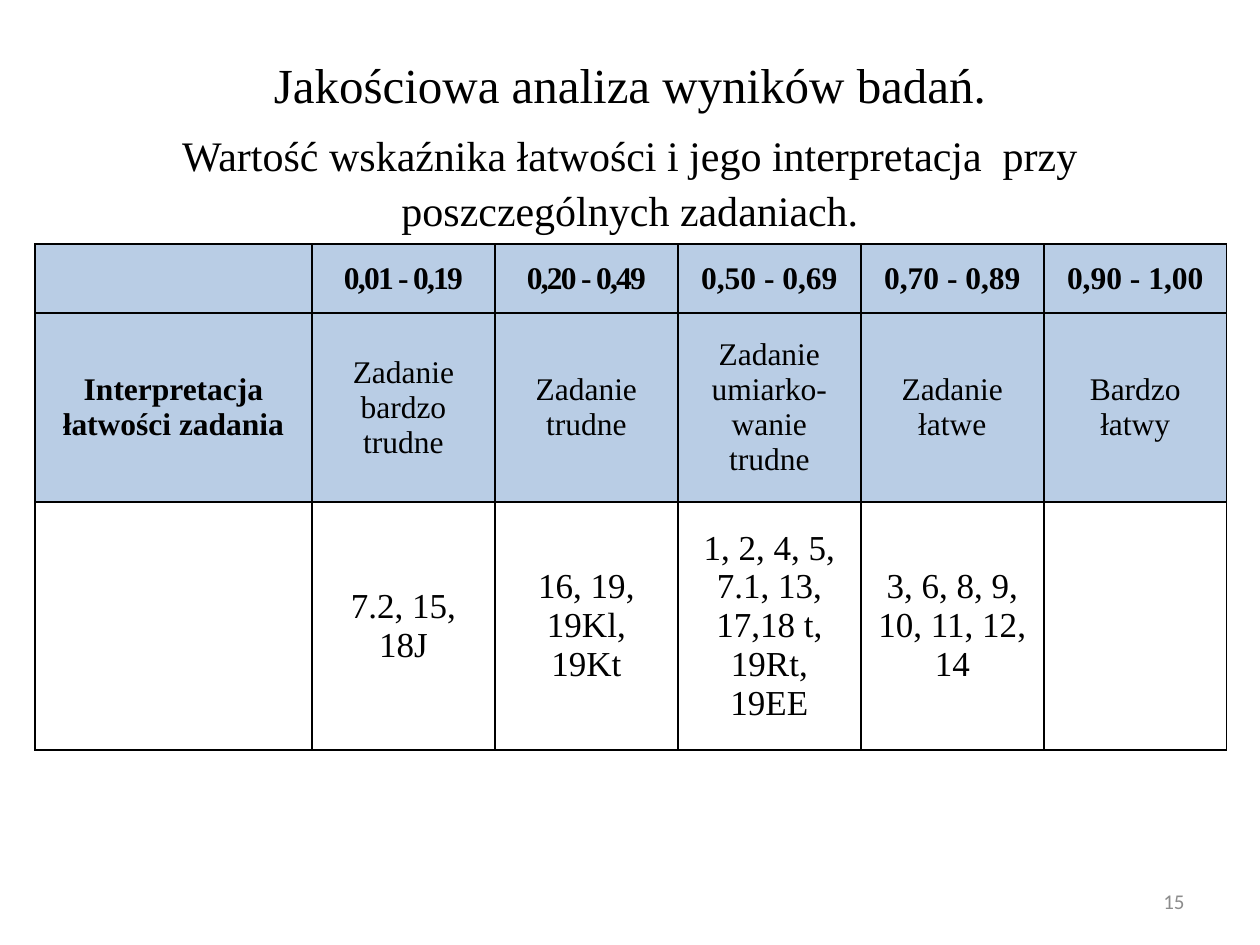
from pptx import Presentation
from pptx.dml.color import RGBColor
from pptx.enum.text import MSO_ANCHOR, PP_ALIGN
from pptx.oxml import parse_xml
from pptx.oxml.ns import nsdecls
from pptx.util import Pt

PX = 914400 // 126
BLACK = RGBColor(0x00, 0x00, 0x00)
GREY = RGBColor(0x8C, 0x8C, 0x8C)
BLUE = RGBColor(0xB9, 0xCD, 0xE5)
SERIF = "Times New Roman"


def style(p, text, size, align=PP_ALIGN.CENTER, name=SERIF, color=BLACK):
    p.text = text
    p.alignment = align
    p.font.size = Pt(size)
    p.font.name = name
    p.font.color.rgb = color


def add_borders(cell):
    tc_pr = cell._tc.get_or_add_tcPr()
    for i, side in enumerate(("lnL", "lnR", "lnT", "lnB")):
        tc_pr.insert(i, parse_xml(
            f'<a:{side} {nsdecls("a")} w="12700"><a:solidFill>'
            f'<a:srgbClr val="{BLACK}"/></a:solidFill></a:{side}>'))


prs = Presentation()
prs.slide_width = 1260 * PX
prs.slide_height = 945 * PX
s = prs.slides.add_slide(prs.slide_layouts[6])

sp = s.shapes.add_textbox(903 * PX, 876 * PX, 294 * PX, 50 * PX)
tf = sp.text_frame
tf.word_wrap = True
tf.vertical_anchor = MSO_ANCHOR.MIDDLE
style(tf.paragraphs[0], "15", 12, PP_ALIGN.RIGHT, "Calibri", GREY)

sp = s.shapes.add_textbox(0, 0, 1260 * PX, 247 * PX)
tf = sp.text_frame
tf.word_wrap = True
tf.margin_left = tf.margin_right = 74 * PX
tf.margin_top = 49 * PX
tf.margin_bottom = 25 * PX
title = tf.paragraphs[0]
style(title, "Jakościowa analiza wyników badań.", 28)
title.space_after = Pt(6)
subtitle = tf.add_paragraph()
style(subtitle, "Wartość wskaźnika łatwości i jego interpretacja  przy poszczególnych zadaniach.", 24)
for p in tf.paragraphs:
    p.line_spacing = 1.1

rows = [
    ["", "0,01 - 0,19", "0,20 - 0,49", "0,50 - 0,69", "0,70 - 0,89", "0,90 - 1,00"],
    ["Interpretacja łatwości zadania", "Zadanie bardzo trudne", "Zadanie trudne",
     "Zadanie umiarko-wanie trudne", "Zadanie łatwe", "Bardzo łatwy"],
    ["", "7.2, 15, 18J", "16, 19, 19Kl, 19Kt",
     "1, 2, 4, 5, 7.1, 13, 17,18 t, 19Rt, 19EE", "3, 6, 8, 9, 10, 11, 12, 14", ""],
]
widths = [277] + [183] * 5
heights = [69, 189, 248]
table = s.shapes.add_table(
    len(rows), len(widths), 35 * PX, 244 * PX, sum(widths) * PX, sum(heights) * PX).table
for column, width in zip(table.columns, widths):
    column.width = width * PX
for row, height in zip(table.rows, heights):
    row.height = height * PX

for i, texts in enumerate(rows):
    for j, text in enumerate(texts):
        cell = table.cell(i, j)
        cell.vertical_anchor = MSO_ANCHOR.MIDDLE
        if i < 2:
            cell.fill.solid()
            cell.fill.fore_color.rgb = BLUE
        else:
            cell.fill.background()
        add_borders(cell)
        if text:
            p = cell.text_frame.paragraphs[0]
            style(p, text, 18 if i < 2 else 20)
            p.font.bold = i == 0 or (i == 1 and j == 0)
            if i == 0 and j in (1, 2):
                p.runs[0].font._element.set("spc", "-100")

prs.save("out.pptx")
